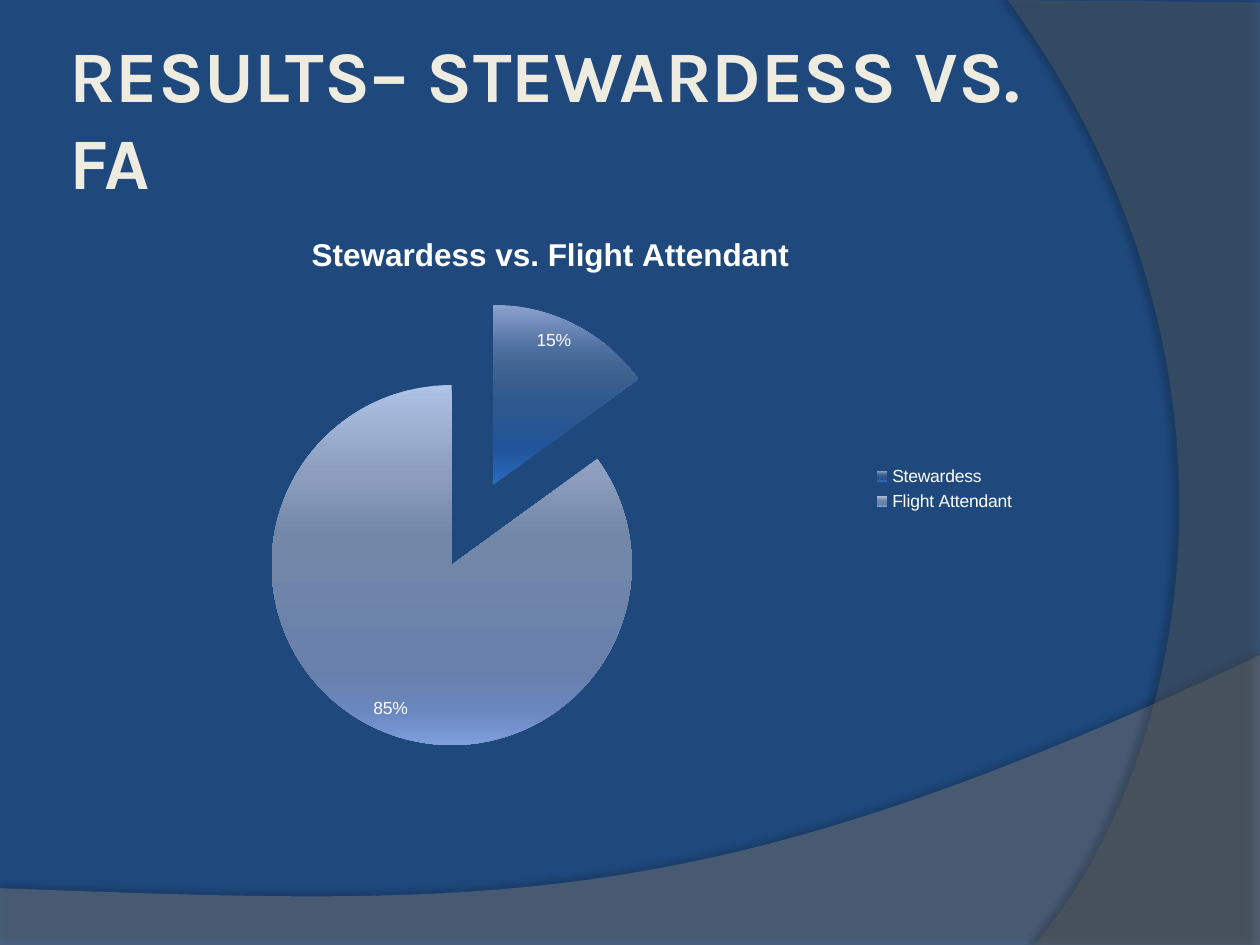
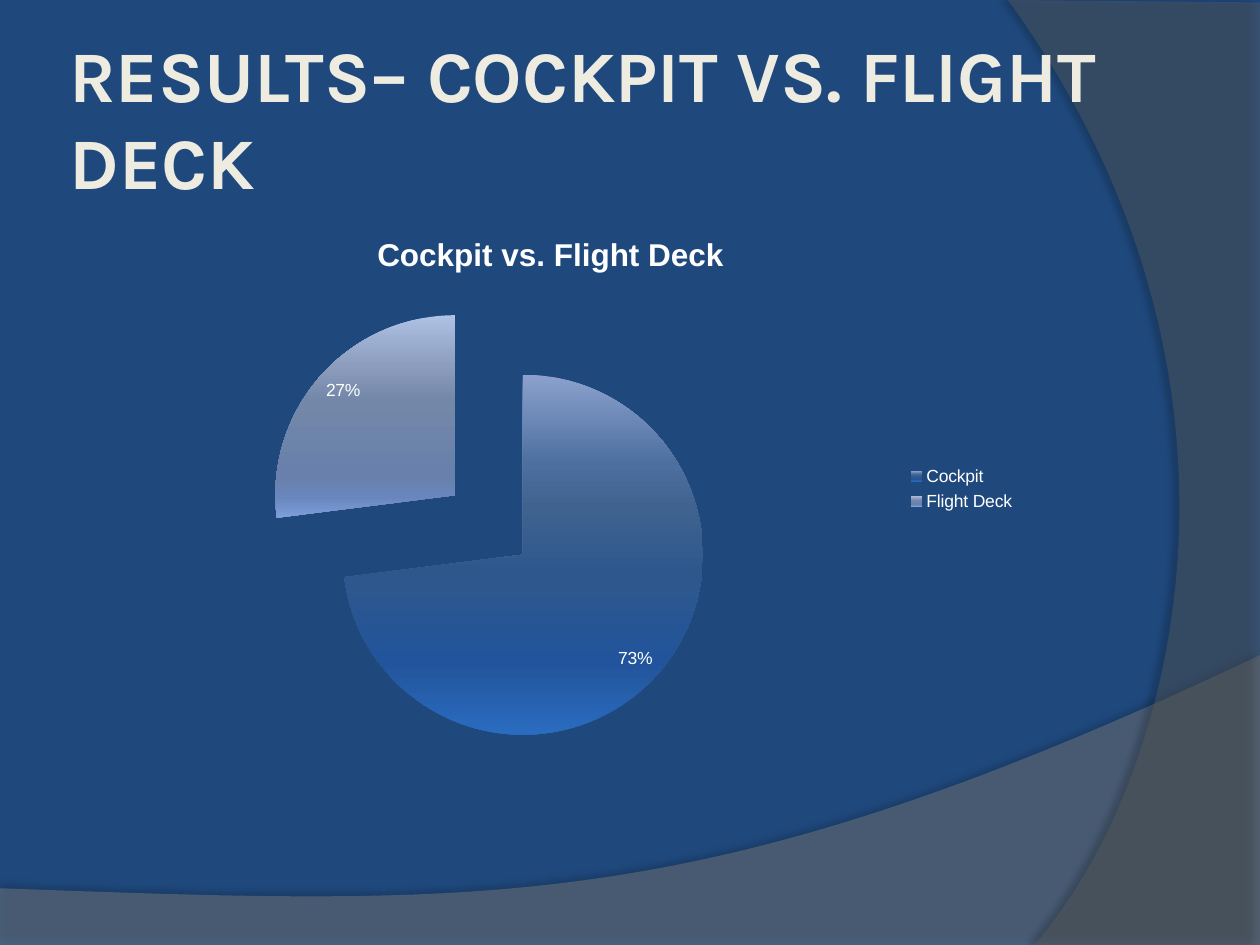
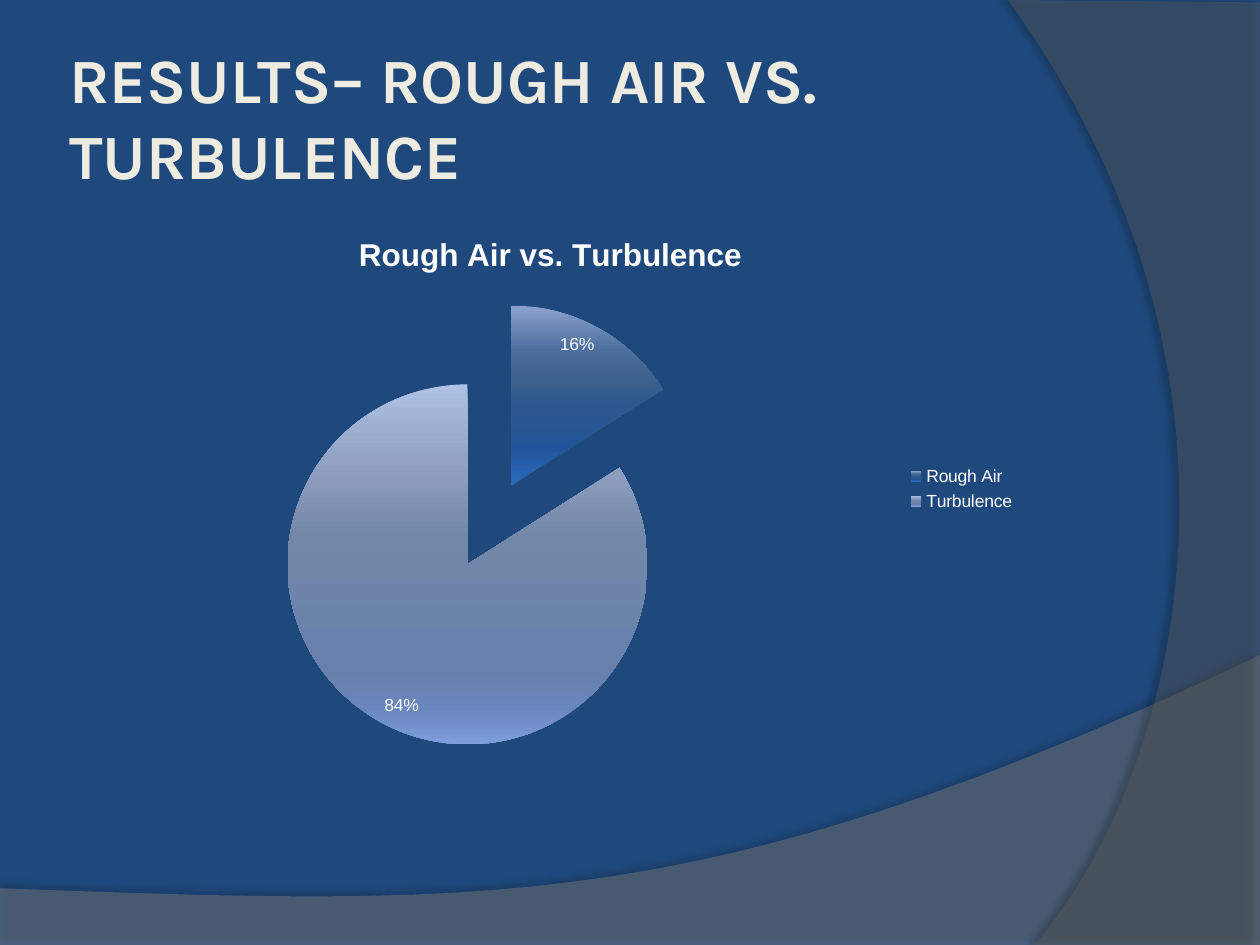
from dataclasses import dataclass

from lxml import etree
from pptx import Presentation
from pptx.chart.data import CategoryChartData
from pptx.dml.color import RGBColor
from pptx.enum.chart import XL_CHART_TYPE, XL_LABEL_POSITION, XL_LEGEND_POSITION
from pptx.enum.text import MSO_ANCHOR
from pptx.oxml.ns import qn
from pptx.util import Inches, Pt

PIE = XL_CHART_TYPE.PIE
INSIDE_END = XL_LABEL_POSITION.INSIDE_END
LEGEND_RIGHT = XL_LEGEND_POSITION.RIGHT
MIDDLE = MSO_ANCHOR.MIDDLE
BLANK_LAYOUT = 6
CURVE_STEPS = 60


@dataclass(frozen=True)
class Theme:
    """Colours, fonts and type sizes shared by the slides."""

    background: str = "1F497D"
    title: str = "EEECE1"
    chart_text: str = "FFFFFF"
    shadow: str = "000000"
    title_font: str = "Karla"
    chart_font: str = "Arial"
    title_size: float = 41.4
    small_title_size: float = 36
    chart_title_size: float = 18
    chart_size: float = 10
    explosion: int = 25
    slice_gradients: tuple = (
        ((0, "8CA1CD"), (25, "4C6F9F"), (37, "3F628F"),
         (55, "2E588D"), (80, "22549B"), (100, "2A6CC0")),
        ((0, "AEC2E5"), (25, "8C9DBD"), (42, "7387A9"),
         (80, "6880AB"), (90, "6A86BE"), (100, "7D9FDB")),
    )


@dataclass(frozen=True)
class Band:
    """A translucent band: straight corners, then a curve that closes it."""

    corners: tuple
    curve: tuple
    color: str
    opacity: int
    shadow_opacity: int
    shadow_distance: float
    shadow_angle: int


BANDS = (
    Band(((0, 7.05), (0, 7.51), (10, 7.51), (10, 5.2)),
         ((5.59, 7.29), (3.91, 7.19), (0, 7.05)), "7F7F7F", 45, 35, 3.5, 270),
    Band(((10, 0.02), (10, 7.5), (8.21, 7.5)),
         ((9.35, 6.19), (10.18, 3), (8, 0)), "5E5E5E", 40, 45, 4, 180),
)


def curve_points(start, controls):
    """Return evenly stepped points along a cubic curve."""
    points = []
    for step in range(1, CURVE_STEPS + 1):
        t = step / CURVE_STEPS
        weights = ((1 - t) ** 3, 3 * t * (1 - t) ** 2, 3 * t ** 2 * (1 - t), t ** 3)
        points.append(tuple(
            sum(weight * point[axis] for weight, point in zip(weights, (start, *controls)))
            for axis in (0, 1)))
    return points


def add_color(parent, color, opacity=100):
    """Append a colour element with the given opacity."""
    element = etree.SubElement(parent, qn("a:srgbClr"), val=color)
    if opacity < 100:
        etree.SubElement(element, qn("a:alpha"), val=str(opacity * 1000))


class Deck:
    """Holds the theme and the current slide, and draws each kind of element."""

    def __init__(self, presentation, theme):
        """Start with a presentation and its theme."""
        self.presentation = presentation
        self.theme = theme
        self.slide = None

    def add_slide(self):
        """Add a slide with the shared background and bands."""
        layout = self.presentation.slide_layouts[BLANK_LAYOUT]
        self.slide = self.presentation.slides.add_slide(layout)
        fill = self.slide.background.fill
        fill.solid()
        fill.fore_color.rgb = RGBColor.from_string(self.theme.background)
        for band in BANDS:
            self.add_band(band)

    def add_band(self, band):
        """Draw one curved translucent band with its soft shadow."""
        outline = [*band.corners, *curve_points(band.corners[-1], band.curve)]
        points = [(Inches(x), Inches(y)) for x, y in outline]
        builder = self.slide.shapes.build_freeform(*points[0])
        builder.add_line_segments(points[1:], close=True)
        shape = builder.convert_to_shape()
        shape.shadow.inherit = False
        shape.line.fill.background()
        shape.fill.solid()
        shape.fill.fore_color.rgb = RGBColor.from_string(band.color)
        properties = shape._element.spPr
        color = properties.find(qn("a:solidFill")).find(qn("a:srgbClr"))
        etree.SubElement(color, qn("a:alpha"), val=str(band.opacity * 1000))
        shadow = etree.SubElement(
            properties.find(qn("a:effectLst")), qn("a:outerShdw"),
            blurRad=str(Pt(4)), dist=str(Pt(band.shadow_distance)),
            dir=str(band.shadow_angle * 60000), algn="ctr", rotWithShape="0")
        add_color(shadow, self.theme.shadow, band.shadow_opacity)

    def style_font(self, font, name, size, color, bold=False):
        """Set the face, size, colour and weight of a font."""
        font.name = name
        font.size = Pt(size)
        font.bold = bold
        font.color.rgb = RGBColor.from_string(color)

    def add_title(self, text, width, size):
        """Place the slide title."""
        box = self.slide.shapes.add_textbox(
            Inches(0.5), Inches(0.3), Inches(width), Inches(1.25))
        frame = box.text_frame
        frame.word_wrap = True
        frame.vertical_anchor = MIDDLE
        frame.margin_left = frame.margin_right = Inches(0.05)
        frame.margin_top = frame.margin_bottom = Inches(0.05)
        frame.text = text
        self.style_font(frame.paragraphs[0].runs[0].font, self.theme.title_font,
                        size, self.theme.title, bold=True)

    def add_pie(self, title, categories, values):
        """Add an exploded pie with percentages and a legend on the right."""
        theme = self.theme
        data = CategoryChartData()
        data.categories = categories
        data.add_series("Series 1", values)
        chart = self.slide.shapes.add_chart(
            PIE, Inches(0.58), Inches(1.67), Inches(7.58), Inches(4.42), data).chart
        self.style_font(chart.font, theme.chart_font, theme.chart_size, theme.chart_text)
        chart.has_title = True
        chart.chart_title.include_in_layout = False
        frame = chart.chart_title.text_frame
        frame.text = title
        self.style_font(frame.paragraphs[0].runs[0].font, theme.chart_font,
                        theme.chart_title_size, theme.chart_text, bold=True)
        chart.has_legend = True
        chart.legend.position = LEGEND_RIGHT
        chart.legend.include_in_layout = False
        self.style_slices(chart.plots[0])

    def style_slices(self, plot):
        """Explode, colour and label the slices of a pie."""
        plot.vary_by_categories = True
        series = plot.series[0]
        explosion = etree.Element(qn("c:explosion"), val=str(self.theme.explosion))
        series._element.find(qn("c:tx")).addnext(explosion)
        for index, stops in enumerate(self.theme.slice_gradients):
            slice_format = series.points[index].format
            slice_format.line.fill.background()
            slice_format.fill.gradient()
            slice_format.fill.gradient_angle = 270
            properties = series.points[index]._element.findall(qn("c:dPt"))[index].find(qn("c:spPr"))
            stop_list = properties.find(qn("a:gradFill")).find(qn("a:gsLst"))
            for stop in list(stop_list):
                stop_list.remove(stop)
            for position, color in stops:
                stop = etree.SubElement(stop_list, qn("a:gs"), pos=str(position * 1000))
                add_color(stop, color)
        plot.has_data_labels = True
        labels = plot.data_labels
        labels.show_value = False
        labels.show_percentage = True
        labels.number_format = "0%"
        labels.number_format_is_linked = False
        labels.position = INSIDE_END
        self.style_font(labels.font, self.theme.chart_font,
                        self.theme.chart_size, self.theme.chart_text)


def main():
    """Build the results slides and save them."""
    theme = Theme()
    presentation = Presentation()
    presentation.slide_width = Inches(10)
    presentation.slide_height = Inches(7.5)
    deck = Deck(presentation, theme)
    results = (
        ("RESULTS– STEWARDESS VS. FA", 8.17, theme.title_size,
         ("Stewardess", "Flight Attendant"), (15, 85)),
        ("RESULTS– COCKPIT VS. FLIGHT DECK", 9.25, theme.title_size,
         ("Cockpit", "Flight Deck"), (73, 27)),
        ("RESULTS– ROUGH AIR VS. TURBULENCE", 9.17, theme.small_title_size,
         ("Rough Air", "Turbulence"), (16, 84)),
    )
    for title, width, size, terms, shares in results:
        deck.add_slide()
        deck.add_title(title, width, size)
        deck.add_pie(" vs. ".join(terms), terms, shares)
    presentation.save("out.pptx")


if __name__ == "__main__":
    main()
